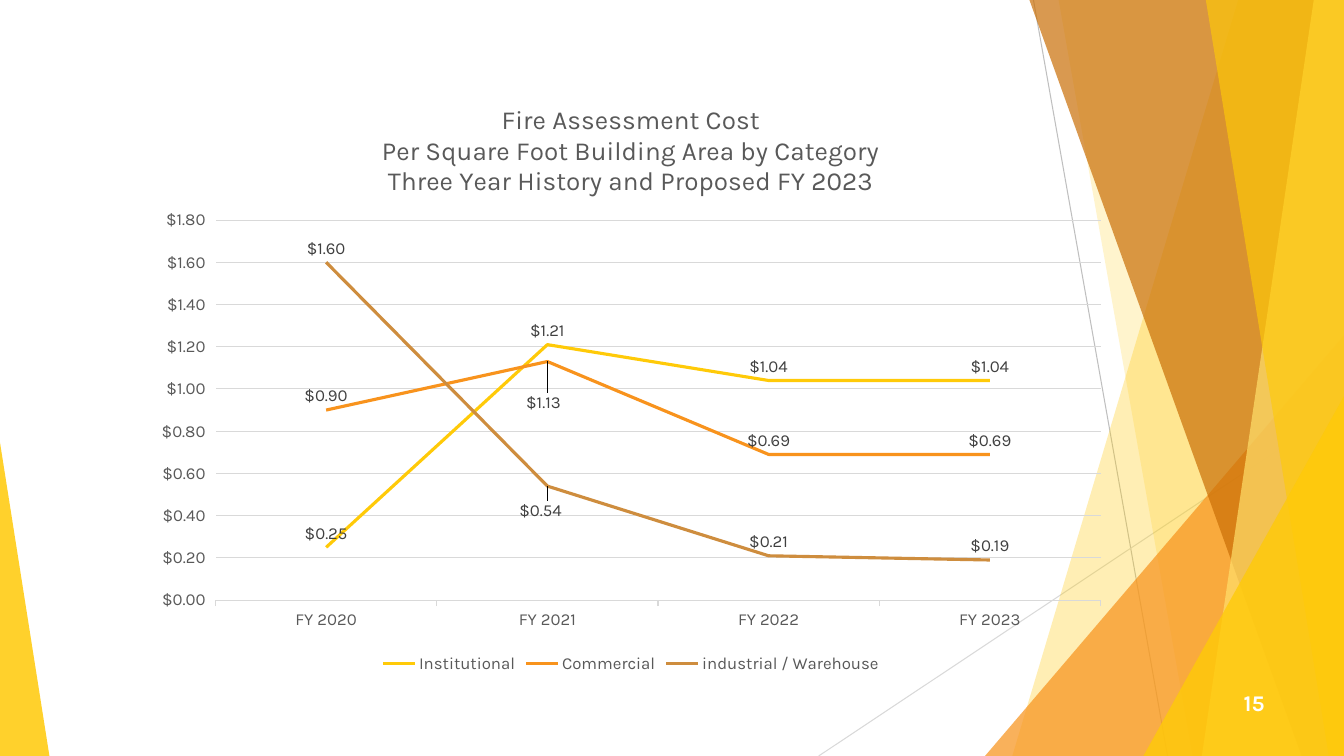
from lxml.etree import SubElement
from pptx import Presentation
from pptx.chart.data import CategoryChartData
from pptx.dml.color import RGBColor
from pptx.enum.chart import XL_CHART_TYPE as CT, XL_LABEL_POSITION as LP
from pptx.enum.chart import XL_LEGEND_POSITION as LEG, XL_TICK_MARK as TICK
from pptx.enum.shapes import MSO_CONNECTOR as CONN, MSO_SHAPE as SHAPE
from pptx.enum.text import MSO_ANCHOR as ANCHOR, PP_ALIGN as ALIGN
from pptx.oxml import parse_xml
from pptx.oxml.ns import nsdecls, qn
from pptx.util import Inches, Pt

FONT = "Karla"
MONEY = '"$"#,##0.00'
W, H = 13.33, 7.5
COLORS = {
    "gold": "FFCA08", "orange": "F8931D", "brown": "CA6F06", "pale": "FFDF6B",
    "tan": "CE8D3E", "gray": "BFBFBF", "grid": "D9D9D9", "text": "595959",
    "label": "404040", "white": "FFFFFF",
}
THIN_LINES = [((10.25, 0), (11.58, H), "gray"), ((W, 4.03), (8.12, H), "grid")]
# kind, geometry, colour, opacity
FACETS = [
    ("band", (12.28, 10.04), "gold", 30),
    ("band", (10.5, 11.83), "gold", 20),
    ("triangle", (9.77, 3.33, 3.56, 1), "orange", 72),
    ("band", (10.21, 12.91), "brown", 70),
    ("band", (13.03, 11.92), "pale", 70),
    ("band", (11.96, 13.18), "gold", 65),
    ("triangle", (11.34, 3.93, 1.99, 1), "gold", 80),
    ("triangle", (0, 4.39, 0.49, 0), "gold", 85),
]
TITLE = [
    "Fire Assessment Cost",
    "Per Square Foot Building Area by Category",
    "Three Year History and Proposed FY 2023",
]
YEARS = ["FY 2020", "FY 2021", "FY 2022", "FY 2023"]
SERIES = [
    ("Institutional", [0.25, 1.21, 1.04, 1.04], "gold", None),
    ("Commercial", [0.90, 1.13, 0.69, 0.69], "orange", (-0.004, 0.092)),
    ("industrial / Warehouse", [1.60, 0.54, 0.21, 0.19], "tan", (-0.007, 0.064)),
]


def rgb(name):
    return RGBColor.from_string(COLORS[name])


def set_font(font, size, color):
    font.name, font.size, font.bold = FONT, Pt(size), False
    font.color.rgb = rgb(color)


def set_line(line, color, width):
    line.color.rgb = rgb(color)
    line.width = Pt(width)


def set_layout(parent, index, **values):
    for old in parent.findall(qn("c:layout")):
        parent.remove(old)
    layout = parse_xml(f"<c:layout {nsdecls('c')}><c:manualLayout/></c:layout>")
    for tag, value in values.items():
        SubElement(layout[0], qn(f"c:{tag}")).set("val", str(value))
    parent.insert(index, layout)


def add_thin_line(shapes, start, end, color):
    ends = [Inches(v) for v in (*start, *end)]
    line = shapes.add_connector(CONN.STRAIGHT, *ends)
    set_line(line.line, color, 0.75)
    SubElement(line._element.spPr, qn("a:effectLst"))


def add_facet(shapes, kind, geometry, color, opacity):
    if kind == "band":
        top, bottom = geometry
        pts = [(Inches(x), Inches(y)) for x, y in
               [(top, 0), (W, 0), (W, H), (bottom, H)]]
        builder = shapes.build_freeform(*pts[0], scale=1.0)
        builder.add_line_segments(pts[1:], close=True)
        sp = builder.convert_to_shape()
    else:
        x, y, width, apex = geometry
        sp = shapes.add_shape(SHAPE.ISOSCELES_TRIANGLE, Inches(x), Inches(y),
                              Inches(width), Inches(H - y))
        sp.adjustments[0] = apex
    sp.shadow.inherit = False
    sp.line.fill.background()
    sp.fill.solid()
    sp.fill.fore_color.rgb = rgb(color)
    clr = sp._element.spPr.find(".//" + qn("a:srgbClr"))
    SubElement(clr, qn("a:alpha")).set("val", str(opacity * 1000))


def add_page_number(shapes):
    box = shapes.add_textbox(Inches(11.89), Inches(6.77), Inches(0.75), Inches(0.4))
    tf = box.text_frame
    tf.word_wrap = True
    tf.vertical_anchor = ANCHOR.MIDDLE
    p = tf.paragraphs[0]
    p.text = "15"
    p.alignment = ALIGN.RIGHT
    set_font(p.runs[0].font, 16, "white")
    p.runs[0].font.bold = True


def add_cost_chart(shapes):
    data = CategoryChartData(number_format=MONEY)
    data.categories = YEARS
    for name, values, *_ in SERIES:
        data.add_series(name, values)
    chart = shapes.add_chart(CT.LINE, Inches(1.41), Inches(0.79), Inches(9.7),
                             Inches(5.93), data).chart
    set_font(chart.font, 12, "text")
    clear = f"<c:spPr {nsdecls('c', 'a')}><a:noFill/><a:ln><a:noFill/></a:ln></c:spPr>"
    chart._chartSpace.chart.addnext(parse_xml(clear))

    chart.has_title = True
    tf = chart.chart_title.text_frame
    tf.text = "\n".join(TITLE)
    for p in tf.paragraphs:
        p.alignment = ALIGN.CENTER
        set_font(p.runs[0].font, 18.6, "text")
    chart.chart_title.include_in_layout = False
    set_layout(chart.chart_title._element, 1, xMode="edge", yMode="edge",
               x=0.242, y=0.035)

    chart.has_legend = True
    chart.legend.position = LEG.BOTTOM
    chart.legend.include_in_layout = False
    set_font(chart.legend.font, 12, "text")

    for axis in (chart.category_axis, chart.value_axis):
        set_font(axis.tick_labels.font, 12, "text")
        axis.major_tick_mark = TICK.OUTSIDE
    set_line(chart.category_axis.format.line, "grid", 0.75)
    costs = chart.value_axis
    costs.minimum_scale, costs.maximum_scale, costs.major_unit = 0, 1.8, 0.2
    costs.tick_labels.number_format = MONEY
    costs.tick_labels.number_format_is_linked = False
    costs.format.line.fill.background()
    set_line(costs.major_gridlines.format.line, "grid", 0.75)

    plot = chart.plots[0]
    plot.vary_by_categories = False
    for series, (_, _, color, shift) in zip(plot.series, SERIES):
        series.smooth = False
        set_line(series.format.line, color, 2.25)
        labels = series.data_labels
        labels.show_value = True
        labels.position = LP.ABOVE
        labels.number_format = MONEY
        labels.number_format_is_linked = False
        set_font(labels.font, 12, "label")
        if shift:
            label = series.points[1].data_label
            label.position = LP.ABOVE
            set_font(label.font, 12, "label")
            dlbl = labels._element.find(qn("c:dLbl"))
            set_layout(dlbl, 1, x=shift[0], y=shift[1])

    area = chart._chartSpace.chart.plotArea
    set_layout(area, 0, layoutTarget="inner", xMode="edge", yMode="edge",
               x=0.075, y=0.235, w=0.905, h=0.636)
    area.append(parse_xml(clear))


def main():
    prs = Presentation()
    prs.slide_width, prs.slide_height = Inches(W), Inches(H)
    shapes = prs.slides.add_slide(prs.slide_layouts[6]).shapes
    for line in THIN_LINES:
        add_thin_line(shapes, *line)
    for facet in FACETS:
        add_facet(shapes, *facet)
    add_page_number(shapes)
    add_cost_chart(shapes)
    prs.save("out.pptx")


if __name__ == "__main__":
    main()
